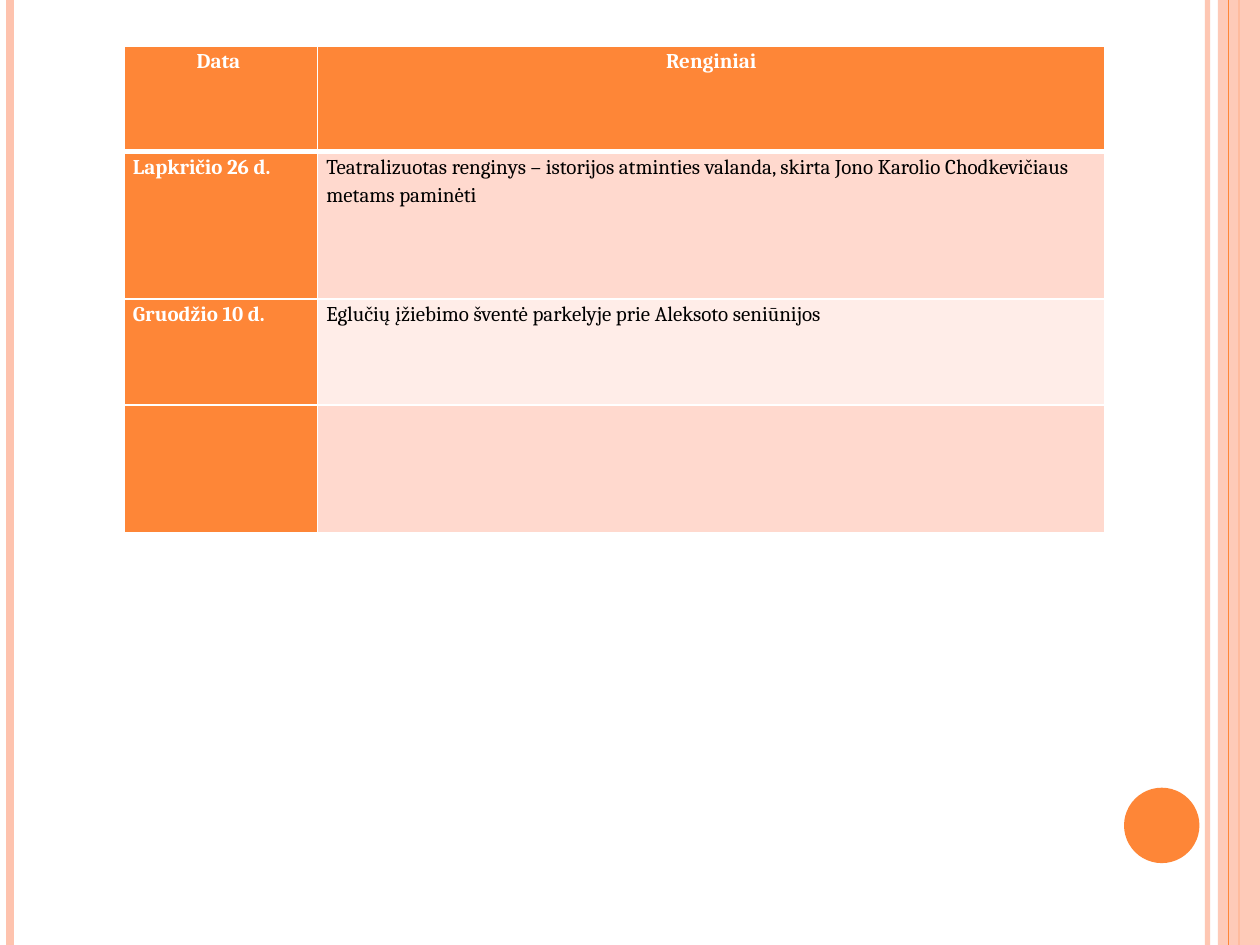
from lxml.etree import SubElement
from pptx import Presentation
from pptx.dml.color import RGBColor
from pptx.enum.shapes import MSO_CONNECTOR, MSO_SHAPE
from pptx.enum.text import PP_ALIGN
from pptx.oxml.ns import qn
from pptx.util import Cm, Pt

ORANGE = RGBColor(0xFE, 0x86, 0x37)
PEACH = RGBColor(0xFE, 0xC3, 0xAE)
BAND_DARK = RGBColor(0xFF, 0xD9, 0xCE)
BAND_LIGHT = RGBColor(0xFF, 0xED, 0xE8)
WHITE = RGBColor(0xFF, 0xFF, 0xFF)
BLACK = RGBColor(0x00, 0x00, 0x00)

PAGE_WIDTH, PAGE_HEIGHT = Cm(25.4), Cm(19.05)
COLUMN_WIDTHS = [Cm(3.9), Cm(15.88)]
ROW_HEIGHTS = [Cm(2.13), Cm(2.97), Cm(2.13), Cm(2.57)]
EVENTS = [
    ("Data ", "Renginiai"),
    ("Lapkričio 26 d.", "Teatralizuotas renginys – istorijos atminties valanda, "
                        "skirta Jono Karolio Chodkevičiaus metams paminėti"),
    ("Gruodžio 10 d.", "Eglučių įžiebimo šventė parkelyje prie Aleksoto seniūnijos"),
    ("", ""),
]
CELL_MARGINS = {"margin_left": Cm(0.18), "margin_right": Cm(0.18),
                "margin_top": 0, "margin_bottom": 0}


def set_alpha(color_parent, percent):
    color = color_parent.find(".//" + qn("a:srgbClr"))
    SubElement(color, qn("a:alpha"), val=str(percent * 1000))


def add_stripe(page, left, color, width, opacity=100):
    stripe = page.shapes.add_connector(
        MSO_CONNECTOR.STRAIGHT, left, 0, left, PAGE_HEIGHT)
    stripe.line.color.rgb = color
    stripe.line.width = Pt(width)
    properties = stripe._element.spPr
    if opacity < 100:
        set_alpha(properties, opacity)
    SubElement(properties, qn("a:effectLst"))


def add_plain_shape(page, kind, left, top, width, height, color, opacity=100):
    shape = page.shapes.add_shape(kind, left, top, width, height)
    shape.shadow.inherit = False
    shape.fill.solid()
    shape.fill.fore_color.rgb = color
    shape.line.fill.background()
    if opacity < 100:
        set_alpha(shape._element.spPr, opacity)


def add_borders(cell, widths):
    properties = cell._tc.get_or_add_tcPr()
    for side, width in widths.items():
        border = SubElement(properties, qn("a:ln" + side), w=str(Pt(width)))
        fill = SubElement(border, qn("a:solidFill"))
        SubElement(fill, qn("a:srgbClr"), val=str(WHITE))


def write_cell(cell, text, color, bold, alignment):
    paragraph = cell.text_frame.paragraphs[0]
    paragraph.alignment = alignment
    paragraph.line_spacing = 1.15
    if text:
        span = paragraph.add_run()
        span.text = text
        span.font.color.rgb = color
        for name, value in {"name": "Cambria", "size": Pt(12), "bold": bold}.items():
            setattr(span.font, name, value)


def add_event_table(page):
    table = page.shapes.add_table(
        len(EVENTS), len(COLUMN_WIDTHS), Cm(2.5), Cm(0.93),
        sum(COLUMN_WIDTHS), sum(ROW_HEIGHTS)).table
    for column, width in zip(table.columns, COLUMN_WIDTHS):
        column.width = width
    for row, height in zip(table.rows, ROW_HEIGHTS):
        row.height = height
    for row_index, texts in enumerate(EVENTS):
        for column_index, text in enumerate(texts):
            cell = table.cell(row_index, column_index)
            heading = row_index == 0 or column_index == 0
            band = BAND_DARK if row_index % 2 else BAND_LIGHT
            for name, value in CELL_MARGINS.items():
                setattr(cell, name, value)
            add_borders(cell, {"L": 1, "R": 1, "T": 3 if row_index == 1 else 1,
                               "B": 3 if row_index == 0 else 1})
            cell.fill.solid()
            cell.fill.fore_color.rgb = ORANGE if heading else band
            write_cell(cell, text, WHITE if heading else BLACK, heading,
                       PP_ALIGN.LEFT if row_index else PP_ALIGN.CENTER)


def main():
    deck = Presentation()
    deck.slide_width, deck.slide_height = PAGE_WIDTH, PAGE_HEIGHT
    page = deck.slides.add_slide(deck.slide_layouts[6])
    add_stripe(page, Cm(24.34), PEACH, 3, 93)
    add_stripe(page, Cm(0.21), PEACH, 4.5)
    add_stripe(page, Cm(24.98), ORANGE, 1.5)
    add_plain_shape(page, MSO_SHAPE.RECTANGLE, Cm(24.55), 0,
                    Cm(0.85), PAGE_HEIGHT, PEACH, 87)
    add_stripe(page, Cm(24.76), ORANGE, 0.75)
    add_plain_shape(page, MSO_SHAPE.OVAL, Cm(22.66), Cm(15.88),
                    Cm(1.52), Cm(1.52), ORANGE)
    add_event_table(page)
    deck.save("out.pptx")


if __name__ == "__main__":
    main()
